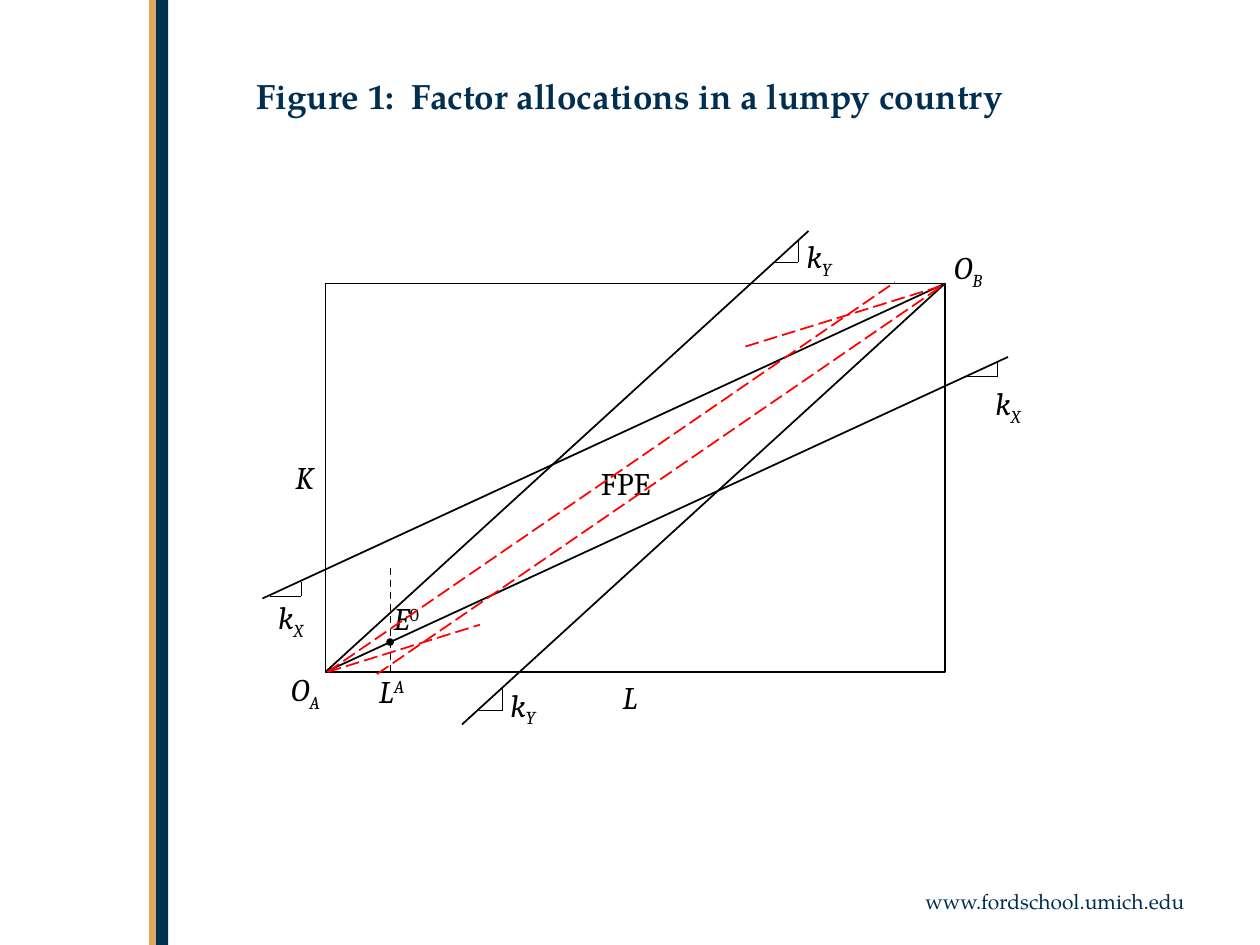
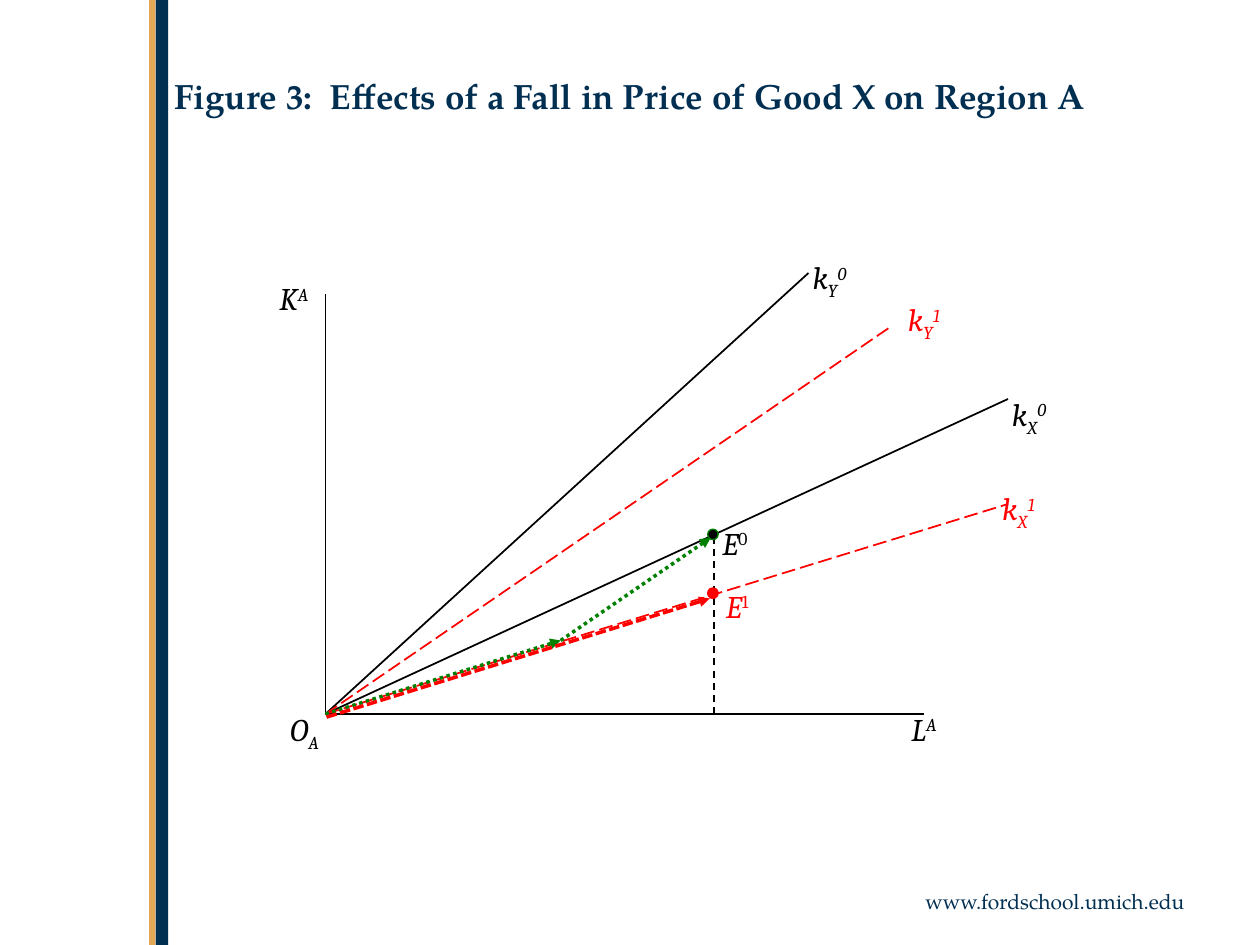
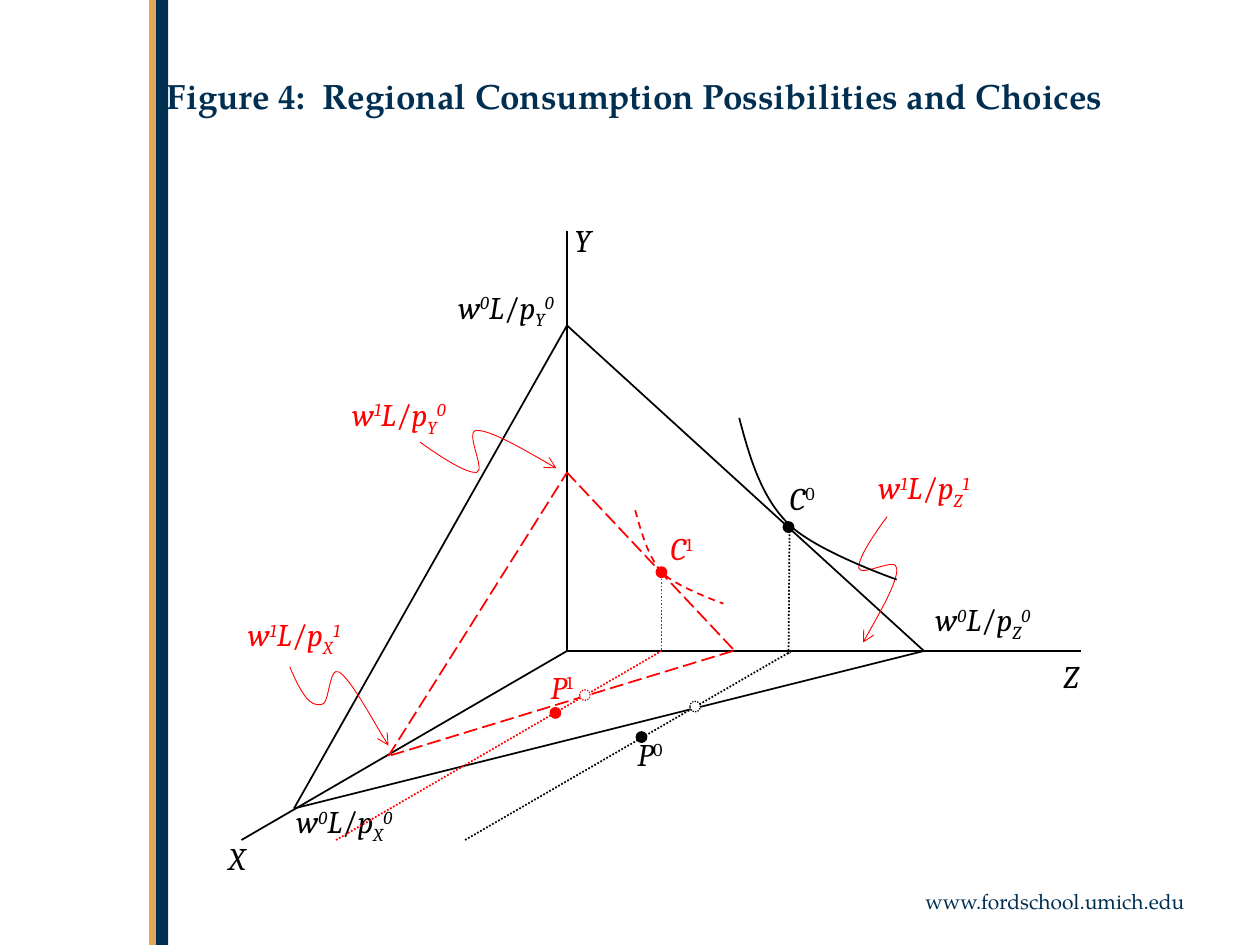
"""Build three figures on factor allocation and regional consumption."""
from lxml import etree
from pptx import Presentation
from pptx import util as u
from pptx.dml.color import RGBColor
from pptx.enum import dml, shapes, text
from pptx.oxml.ns import qn

NAVY = RGBColor(0x00, 0x2F, 0x52)
GOLD = RGBColor(0xE3, 0xA8, 0x56)
BLACK = RGBColor(0x00, 0x00, 0x00)
WHITE = RGBColor(0xFF, 0xFF, 0xFF)
RED = RGBColor(0xFF, 0x00, 0x00)
GREEN = RGBColor(0x00, 0x80, 0x00)
SERIF, MATH = "TeX Gyre Pagella", "Cambria"
SHIFTS = {"_": "-25000", "^": "30000"}
DASH = dml.MSO_LINE

deck = Presentation()
deck.slide_width, deck.slide_height = u.Inches(10), u.Inches(7.5)
COLUMNS, ROWS = 120, 90
CELL = deck.slide_width // COLUMNS

SOLID = dict(color=BLACK)
THIN = dict(color=BLACK, width=0.5)
DROP = dict(color=BLACK, dash=DASH.DASH)
NEW = dict(color=RED, dash=DASH.LONG_DASH)
OLD_TRACE = dict(color=BLACK, dash=DASH.ROUND_DOT)
NEW_TRACE = dict(color=RED, dash=DASH.ROUND_DOT)
OLD_VECTOR = dict(color=GREEN, width=2, dash=DASH.ROUND_DOT, tail="triangle")
NEW_VECTOR = dict(color=RED, width=2, dash=DASH.SQUARE_DOT, tail="triangle")
POINTER = dict(color=RED, width=0.5, tail="arrow")
NEW_CURVE = dict(color=RED, dash=DASH.DASH)


def write(page, content, left, top, width, height, font=MATH, size=18, color=BLACK,
          bold=False, italic=False, upright="", align=text.PP_ALIGN.CENTER):
    """Add a text box, in which _ lowers and ^ raises the next character."""
    pieces, shift = [], None
    for char in content:
        if char in SHIFTS:
            shift = SHIFTS[char]
            continue
        style = (shift, italic and char not in upright)
        if pieces and pieces[-1][1] == style:
            pieces[-1][0] += char
        else:
            pieces.append([char, style])
        shift = None
    box = page.shapes.add_textbox(*(round(n * CELL) for n in (left, top, width, height)))
    box.text_frame.word_wrap = True
    para = box.text_frame.paragraphs[0]
    para.alignment = align
    for piece, (baseline, slanted) in pieces:
        span = para.add_run()
        span.text = piece
        span.font.name, span.font.size = font, u.Pt(size)
        span.font.bold, span.font.italic = bold, slanted
        span.font.color.rgb = color
        if baseline:
            span.font._element.set("baseline", baseline)


def stroke(item, color, width=1, dash=None, tail=None):
    """Set the outline of a shape or connector and remove its shadow."""
    item.line.color.rgb = color
    item.line.width = u.Pt(width)
    if dash:
        item.line.dash_style = dash
    properties = item._element.spPr
    if tail:
        etree.SubElement(properties.find(qn("a:ln")), qn("a:tailEnd"), type=tail)
    etree.SubElement(properties, qn("a:effectLst"))


slope_marks = []
for x, y, run, rise in [(95, 35.9, 3, 1.4), (76, 25, 2.3, 2.2),
                        (47.9, 67.7, 2.3, 2.2), (28.7, 56.8, 3, 1.4)]:
    slope_marks += [(x - run, y, x, y), (x, y - rise, x, y)]

allocation = dict(
    title="Figure 1:  Factor allocations in a lumpy country",
    title_left=6,
    frames=[(31, 27, 59, 37)],
    labels=[("K", 24, 43), ("L", 55, 64), ("k_X", 91, 36), ("k_Y", 73, 22),
            ("k_Y", 44.8, 64.7), ("k_X", 22.7, 56.4), ("O_A", 24.1, 63.2),
            ("O_B", 87.2, 23), ("L^A", 32.3, 63.4), ("FPE", 54.6, 43.6),
            ("E^0", 33.7, 56.5)],
    lines=[(SOLID, [(31, 64, 96, 34), (31, 64, 77, 22), (90, 27, 25, 57), (90, 27, 44, 69)]),
           (THIN, slope_marks),
           (DROP, [(37.2, 64, 37.2, 54)]),
           (NEW, [(31.2, 64, 85.2, 26.9), (35.9, 64.2, 89.9, 27.1),
                  (31.2, 64, 45.7, 59.5), (71, 33, 90.1, 27.1)])],
    curves=[],
    dots=[(37.15, 61.15, 0.6, BLACK, SOLID)],
)

price_fall = dict(
    title="Figure 3:  Effects of a Fall in Price of Good X on Region A",
    title_left=6,
    frames=[],
    labels=[("E^1", 65.2, 55.3), ("O_A", 24, 67), ("L^A", 83, 67), ("K^A", 23, 26),
            ("k_Y^0", 74, 24), ("k_X^0", 93, 37), ("k_Y^1", 83, 28), ("k_X^1", 92, 46),
            ("E^0", 65, 49.3)],
    lines=[(SOLID, [(31, 68, 88, 68), (31, 68, 31, 28), (31, 68, 96, 38), (31, 68, 77, 26)]),
           (DROP, [(68, 68, 68, 51)]),
           (NEW, [(31, 68, 85, 31), (31, 68, 96, 48)]),
           (OLD_VECTOR, [(31, 68, 53.4, 61), (53.4, 61, 67.7, 51.2)]),
           (NEW_VECTOR, [(31.1, 68.3, 67.6, 57)])],
    curves=[],
    dots=[(67.9, 50.9, 1, BLACK, dict(color=GREEN)), (67.9, 56.5, 1, RED, dict(color=RED))],
)

consumption = dict(
    title="Figure 4:  Regional Consumption Possibilities and Choices",
    title_left=6.5,
    frames=[],
    labels=[("Z", 97, 62), ("X", 17.6, 79.3), ("Y", 50.5, 20.5),
            ("w^0L/p_X^0", 21.8, 75.8), ("w^0L/p_Y^0", 37.2, 26.8),
            ("w^0L/p_Z^0", 82.6, 56.6), ("w^1L/p_Y^0", 27, 37),
            ("w^1L/p_X^1", 17, 58), ("w^1L/p_Z^1", 77, 44),
            ("C^0", 71.4, 45), ("C^1", 59.9, 49.8), ("P^1", 48.5, 63), ("P^0", 56.9, 69.4)],
    lines=[(SOLID, [(54, 62, 103, 62), (54, 62, 54, 22), (54, 62, 23, 80),
                    (28, 77, 54, 31), (54, 31, 88, 62), (88, 62, 28, 77)]),
           (NEW, [(69.8, 61.8, 54, 45), (37, 72, 54, 45), (69.8, 62, 37, 72)]),
           (OLD_TRACE, [(75.1, 62.3, 75.2, 49.9), (44.3, 80, 75.4, 62)]),
           (NEW_TRACE, [(63, 61.9, 63, 54.2), (32, 80, 63, 62)])],
    curves=[(POINTER, [(84.5, 49.2), (83, 51.2), (81.7, 53.3), (81.8, 54.1), (82, 55),
                       (85.4, 53), (85.4, 54.1), (85.6, 55.3), (82.2, 61.2), (82.2, 61.2)]),
            (POINTER, [(40, 42.1), (42.2, 43.7), (44.5, 45.1), (45.4, 45), (46.3, 44.8),
                       (44.2, 41), (45.4, 41), (46.7, 40.9), (53, 44.6), (53, 44.6)]),
            (POINTER, [(27.6, 63.5), (29.2, 67.3), (29.9, 67.1), (30.6, 67.1), (31.4, 67.2),
                       (31.3, 63.4), (32.3, 64), (33.4, 64.7), (36.2, 69.8), (37, 71)]),
            (SOLID, [(70.4, 39.8), (71.4, 43.6), (72.5, 47.3), (75, 49.8),
                     (77.4, 52.4), (85.4, 55.2), (85.4, 55.2)]),
            (NEW_CURVE, [(60.5, 48.6), (61.1, 50.8), (61.7, 52.9), (63, 54.5),
                         (64.4, 55.9), (68.9, 57.5), (68.9, 57.5)])],
    dots=[(63, 54.5, 1, RED, dict(color=RED)), (75.1, 50.2, 1, BLACK, SOLID),
          (55.7, 66.2, 1, WHITE, NEW_TRACE), (66.2, 67.3, 1, WHITE, OLD_TRACE),
          (52.9, 67.9, 1, RED, dict(color=RED)), (61.1, 70.2, 1, BLACK, SOLID)],
)

for figure in (allocation, price_fall, consumption):
    page = deck.slides.add_slide(deck.slide_layouts[6])

    for left, width, color in [(14.82, 1.2, NAVY), (14.2, 0.6, GOLD)]:
        band = page.shapes.add_shape(shapes.MSO_SHAPE.RECTANGLE, round(left * CELL), 0,
                                     round(width * CELL), deck.slide_height)
        band.shadow.inherit = False
        band.fill.solid()
        band.fill.fore_color.rgb = color
        band.line.fill.background()
    write(page, "www.fordschool.umich.edu", 84, 84, 30, 3.6, font=SERIF, size=12,
          color=NAVY, align=text.PP_ALIGN.RIGHT)
    write(page, figure["title"], figure["title_left"], 6.5, 108, 15, font=SERIF, size=20,
          color=NAVY, bold=True)

    for bounds in figure["frames"]:
        frame = page.shapes.add_shape(shapes.MSO_SHAPE.RECTANGLE, *(n * CELL for n in bounds))
        frame.fill.background()
        stroke(frame, **SOLID)

    for label, left, top in figure["labels"]:
        write(page, label, left, top, 22 if "/" in label else 10, 5,
              color=RED if "^1" in label else BLACK, italic=label != "FPE",
              upright="01" if label[0] in "CEP" else "/")

    for pen, segments in figure["lines"]:
        for segment in segments:
            line = page.shapes.add_connector(shapes.MSO_CONNECTOR.STRAIGHT,
                                             *(round(n * CELL) for n in segment))
            stroke(line, **pen)

    for pen, points in figure["curves"]:
        start, *others = [(round(x * CELL), round(y * CELL)) for x, y in points]
        builder = page.shapes.build_freeform(*start)
        builder.add_line_segments(others, close=False)
        curve = builder.convert_to_shape()
        nodes = iter(list(curve._element.iter(qn("a:lnTo"))))
        for first, second, third in zip(nodes, nodes, nodes):
            first.tag = qn("a:cubicBezTo")
            for node in (second, third):
                first.append(node[0])
                node.getparent().remove(node)
        curve.fill.background()
        stroke(curve, **pen)

    for x, y, size, color, pen in figure["dots"]:
        dot = page.shapes.add_shape(
            shapes.MSO_SHAPE.OVAL,
            *(round(n * CELL) for n in (x - size / 2, y - size / 2, size, size)))
        dot.fill.solid()
        dot.fill.fore_color.rgb = color
        stroke(dot, **{**pen, "width": 0.75})

deck.save("out.pptx")
